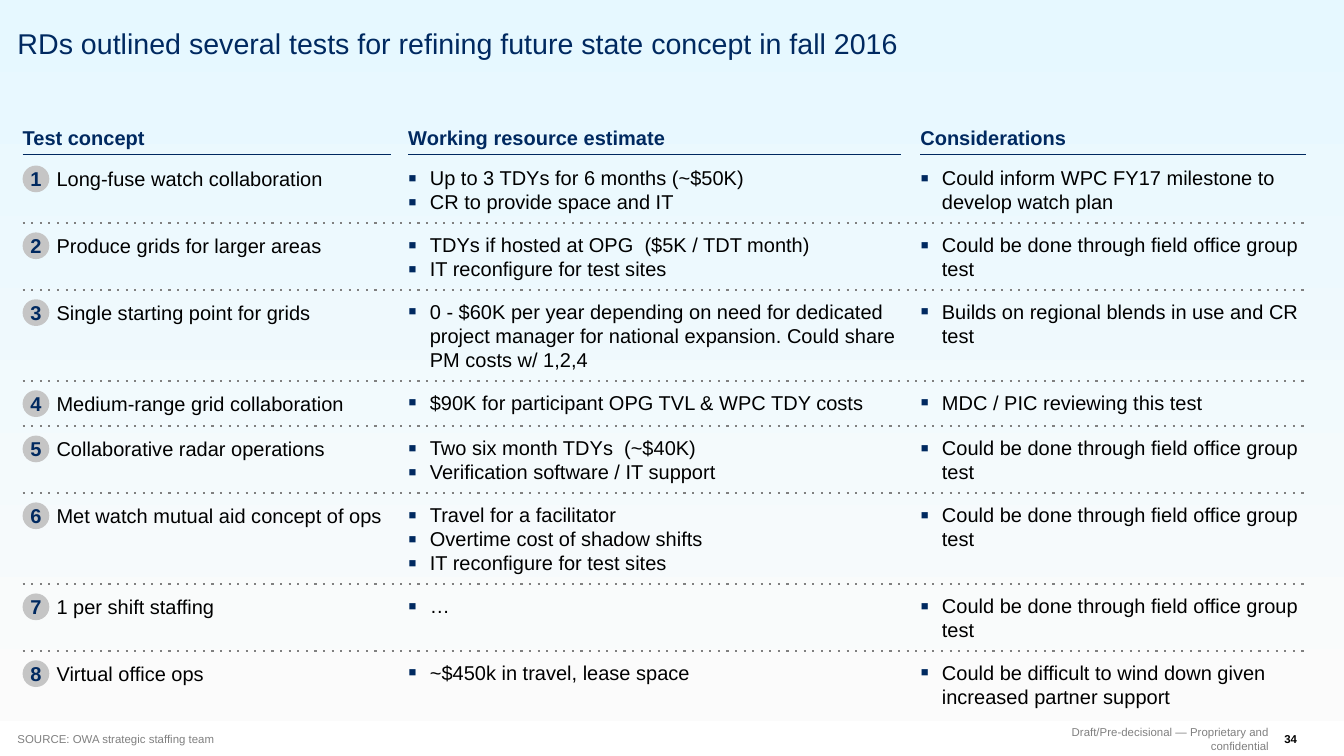
from lxml.etree import SubElement
from pptx import Presentation
from pptx.dml.color import RGBColor
from pptx.enum.dml import MSO_LINE
from pptx.enum.shapes import MSO_CONNECTOR, MSO_SHAPE
from pptx.enum.text import MSO_ANCHOR, PP_ALIGN
from pptx.oxml.ns import qn
from pptx.util import Inches, Pt

WIDTH, HEIGHT = 13.07, 7.35
NAVY, BLACK, GRAY, SILVER = "002960", "000000", "808080", "C5C5C5"
COLUMNS = [(0.22, 3.58), (3.97, 4.79), (8.95, 3.75)]
LEFT, RIGHT = 0.22, 12.7
HEADINGS = ["Test concept", "Working resource estimate", "Considerations"]
HEADING_TOP, HEADING_RULE, FIRST_ROW = 1.22, 1.5, 1.61
LINE_HEIGHT, BADGE, ROW_PADDING = 0.235, 0.26, 0.09
NAME_INDENT, BULLET_INDENT = 0.33, 0.21
FOOTER_TOP, FOOTER_HEIGHT = 7.12, 0.13
FIELD_TEST = "Could be done through field office group test"

TESTS = [
    ("Long-fuse watch collaboration",
     ["Up to 3 TDYs for 6 months (~$50K)", "CR to provide space and IT"],
     "Could inform WPC FY17 milestone to develop watch plan", 2),
    ("Produce grids for larger areas",
     ["TDYs if hosted at OPG  ($5K / TDT month)", "IT reconfigure for test sites"],
     FIELD_TEST, 2),
    ("Single starting point for grids",
     ["0 - $60K per year depending on need for dedicated project manager "
      "for national expansion. Could share PM costs w/ 1,2,4"],
     "Builds on regional blends in use and CR test", 3),
    ("Medium-range grid collaboration",
     ["$90K for participant OPG TVL & WPC TDY costs"],
     "MDC / PIC reviewing this test", 1),
    ("Collaborative radar operations",
     ["Two six month TDYs  (~$40K)", "Verification software / IT support"],
     FIELD_TEST, 2),
    ("Met watch mutual aid concept of ops",
     ["Travel for a facilitator", "Overtime cost of shadow shifts",
      "IT reconfigure for test sites"],
     FIELD_TEST, 3),
    ("1 per shift staffing", ["…"], FIELD_TEST, 2),
    ("Virtual office ops", ["~$450k in travel, lease space"],
     "Could be difficult to wind down given increased partner support", 2),
]


def color(value):
    return RGBColor.from_string(value)


def add_bullet(para):
    properties = para._p.get_or_add_pPr()
    properties.set("marL", str(Inches(BULLET_INDENT)))
    properties.set("indent", str(-Inches(BULLET_INDENT)))
    bullet_color = SubElement(properties, qn("a:buClr"))
    SubElement(bullet_color, qn("a:srgbClr"), val=NAVY)
    SubElement(properties, qn("a:buSzPct"), val="125000")
    SubElement(properties, qn("a:buFont"), typeface="Arial")
    SubElement(properties, qn("a:buChar"), char="▪")


def write(shape, lines, size=14, ink=BLACK, bold=False, align=PP_ALIGN.LEFT,
          anchor=MSO_ANCHOR.TOP, bullets=False, wrap=True):
    frame = shape.text_frame
    frame.margin_left = frame.margin_top = frame.margin_right = frame.margin_bottom = 0
    frame.word_wrap = wrap
    frame.vertical_anchor = anchor
    frame.text = "\n".join(lines)
    for para in frame.paragraphs:
        if bullets:
            add_bullet(para)
        para.alignment = align
        para.font.name = "Arial"
        para.font.size = Pt(size)
        para.font.bold = bold
        para.font.color.rgb = color(ink)


def add_text(page, left, top, width, height, lines, **style):
    box = page.shapes.add_textbox(Inches(left), Inches(top), Inches(width), Inches(height))
    write(box, lines, **style)


def add_rule(page, left, right, top, ink, weight, dotted=False):
    rule = page.shapes.add_connector(
        MSO_CONNECTOR.STRAIGHT, Inches(left), Inches(top), Inches(right), Inches(top))
    rule.line.color.rgb = color(ink)
    rule.line.width = Pt(weight)
    if dotted:
        rule.line.dash_style = MSO_LINE.ROUND_DOT
        rule._element.find(".//" + qn("a:prstDash")).set("val", "dot")
    SubElement(rule._element.spPr, qn("a:effectLst"))


def add_background(page):
    panel = page.shapes.add_shape(MSO_SHAPE.RECTANGLE, 0, 0, Inches(WIDTH), Inches(7.01))
    panel.shadow.inherit = False
    panel.line.fill.background()
    panel.fill.gradient()
    panel.fill.gradient_angle = 90
    for stop, value in zip(panel.fill.gradient_stops, ["FBFBFB", "E6F8FF"]):
        stop.color.rgb = color(value)


def add_badge(page, number, top):
    badge = page.shapes.add_shape(
        MSO_SHAPE.OVAL, Inches(LEFT), Inches(top), Inches(BADGE), Inches(BADGE))
    badge.shadow.inherit = False
    badge.fill.solid()
    badge.fill.fore_color.rgb = color(SILVER)
    badge.line.fill.background()
    write(badge, [str(number)], ink=NAVY, bold=True, align=PP_ALIGN.CENTER,
          anchor=MSO_ANCHOR.MIDDLE, wrap=False)


def add_headings(page):
    for (left, width), heading in zip(COLUMNS, HEADINGS):
        add_text(page, left, HEADING_TOP, width, 0.24, [heading], ink=NAVY, bold=True)
        add_rule(page, left, left + width, HEADING_RULE, NAVY, 0.75)


def add_tests(page):
    (name_left, name_width), (estimate_left, estimate_width), (note_left, note_width) = COLUMNS
    top = FIRST_ROW
    for number, (name, estimates, note, line_count) in enumerate(TESTS, 1):
        height = max(BADGE, line_count * LINE_HEIGHT)
        if number > 1:
            add_rule(page, LEFT, RIGHT, top - ROW_PADDING, GRAY, 1.5, dotted=True)
        add_badge(page, number, top)
        add_text(page, name_left + NAME_INDENT, top + 0.01, name_width - NAME_INDENT,
                 LINE_HEIGHT, [name])
        add_text(page, estimate_left, top, estimate_width, height, estimates, bullets=True)
        add_text(page, note_left, top, note_width, height, [note], bullets=True)
        top += height + 2 * ROW_PADDING


def add_footer(page):
    add_text(page, 0.17, FOOTER_TOP, 9.5, FOOTER_HEIGHT,
             ["SOURCE: OWA strategic staffing team"], size=8, ink=GRAY,
             anchor=MSO_ANCHOR.BOTTOM)
    add_text(page, 9.83, FOOTER_TOP, 2.51, FOOTER_HEIGHT,
             ["Draft/Pre-decisional — Proprietary and confidential"], size=8, ink=GRAY,
             align=PP_ALIGN.RIGHT, anchor=MSO_ANCHOR.MIDDLE, wrap=False)
    add_text(page, 12.49, FOOTER_TOP, 0.14, FOOTER_HEIGHT, ["34"], size=8, bold=True,
             anchor=MSO_ANCHOR.MIDDLE, wrap=False)


def main():
    deck = Presentation()
    deck.slide_width, deck.slide_height = Inches(WIDTH), Inches(HEIGHT)
    page = deck.slides.add_slide(deck.slide_layouts[6])
    add_background(page)
    add_text(page, 0.17, 0.25, 12.57, 0.34,
             ["RDs outlined several tests for refining future state concept in fall 2016"],
             size=20, ink=NAVY)
    add_headings(page)
    add_tests(page)
    add_footer(page)
    deck.save("out.pptx")


if __name__ == "__main__":
    main()
